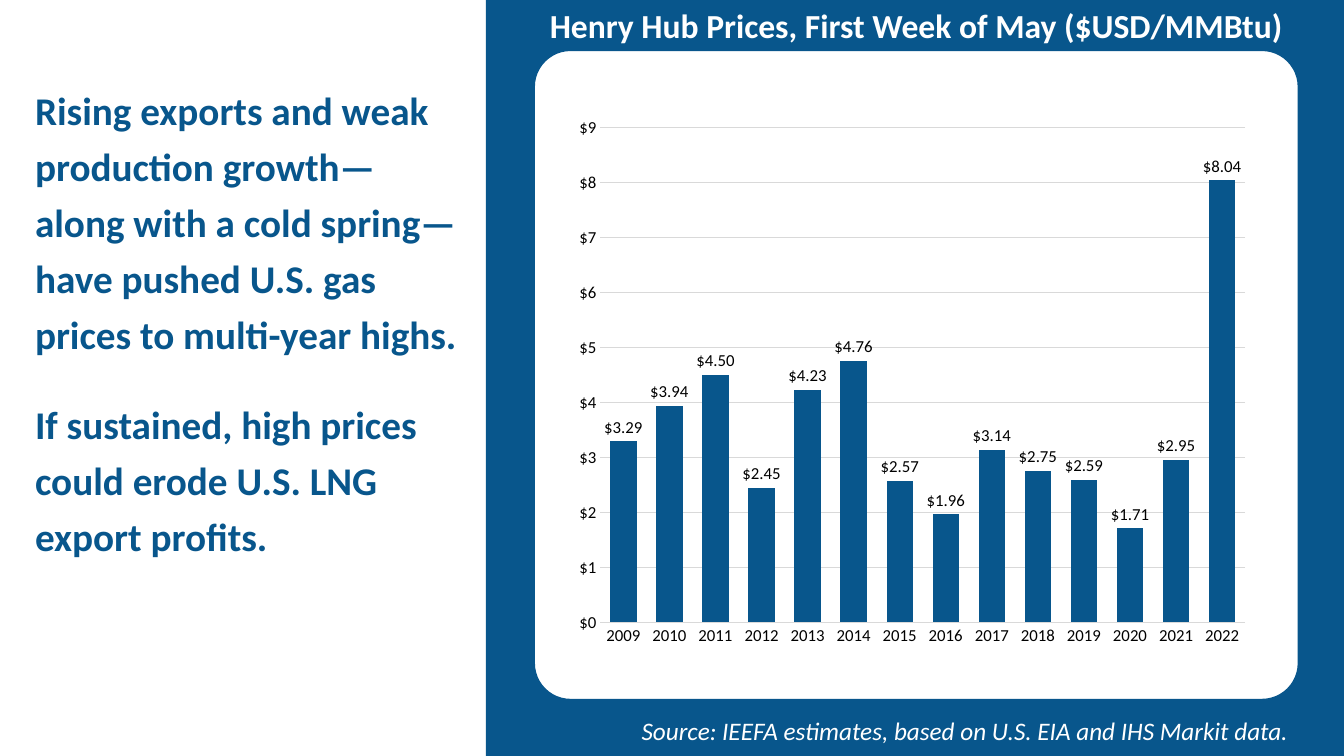
"""Build the Henry Hub gas price slide."""
from dataclasses import dataclass

from pptx import Presentation
from pptx.chart.data import CategoryChartData
from pptx.dml.color import RGBColor
from pptx.enum import chart as charts, shapes, text
from pptx.util import Pt

BLUE, WHITE, BLACK, GREY = "08568C", "FFFFFF", "000000", "D9D9D9"
FONT = "Calibri"
FIRST_YEAR = 2009
PRICES = (3.29, 3.94, 4.5, 2.45, 4.23, 4.76, 2.57, 1.96, 3.14, 2.75, 2.59, 1.71, 2.95, 8.04)


@dataclass(frozen=True)
class Box:
    left: float
    top: float
    width: float
    height: float

    def lengths(self) -> tuple[int, int, int, int]:
        return Pt(self.left), Pt(self.top), Pt(self.width), Pt(self.height)


@dataclass(frozen=True)
class Panel:
    box: Box
    kind: shapes.MSO_SHAPE
    fill: str
    line: str | None = None
    corner: float | None = None


PANELS = (
    Panel(Box(347, 0, 613, 540), shapes.MSO_SHAPE.RECTANGLE, BLUE),
    Panel(Box(381.6, 36, 545.8, 463.7), shapes.MSO_SHAPE.ROUNDED_RECTANGLE, WHITE, BLUE, 0.056),
)


def color(value: str) -> RGBColor:
    return RGBColor.from_string(value)


def style_font(font, size: float, shade: str, bold: bool = False, italic: bool = False) -> None:
    font.name, font.size, font.bold, font.italic = FONT, Pt(size), bold, italic
    font.color.rgb = color(shade)


def add_panel(slide, panel: Panel) -> None:
    shape = slide.shapes.add_shape(panel.kind, *panel.box.lengths())
    shape.shadow.inherit = False
    shape.fill.solid()
    shape.fill.fore_color.rgb = color(panel.fill)
    if panel.line:
        shape.line.color.rgb = color(panel.line)
        shape.line.width = Pt(1)
    else:
        shape.line.fill.background()
    if panel.corner is not None:
        shape.adjustments[0] = panel.corner


def add_text(slide, box: Box, *paragraphs: str, size: float, shade: str,
             bold: bool = False, italic: bool = False,
             align: text.PP_ALIGN = text.PP_ALIGN.LEFT,
             anchor: text.MSO_ANCHOR = text.MSO_ANCHOR.TOP,
             line_spacing: float | None = None, space_after: float = 0,
             margin_bottom: float = 3.6) -> None:
    frame = slide.shapes.add_textbox(*box.lengths()).text_frame
    frame.word_wrap = True
    frame.vertical_anchor = anchor
    frame.margin_bottom = Pt(margin_bottom)
    for index, words in enumerate(paragraphs):
        paragraph = frame.add_paragraph() if index else frame.paragraphs[0]
        paragraph.alignment = align
        paragraph.space_after = Pt(space_after)
        if line_spacing:
            paragraph.line_spacing = Pt(line_spacing)
        run = paragraph.add_run()
        run.text = words
        style_font(run.font, size, shade, bold, italic)


def add_price_chart(slide, box: Box) -> None:
    data = CategoryChartData()
    data.categories = [str(FIRST_YEAR + index) for index in range(len(PRICES))]
    data.add_series("Series 1", PRICES)
    chart = slide.shapes.add_chart(
        charts.XL_CHART_TYPE.COLUMN_CLUSTERED, *box.lengths(), data).chart
    chart.has_title = chart.has_legend = False
    style_font(chart.font, 12, BLACK)

    for axis in (chart.category_axis, chart.value_axis):
        axis.major_tick_mark = axis.minor_tick_mark = charts.XL_TICK_MARK.NONE
        style_font(axis.tick_labels.font, 12, BLACK)
    values = chart.value_axis
    values.minimum_scale, values.maximum_scale, values.major_unit = 0, 9, 1
    values.tick_labels.number_format = '"$"#,##0'
    values.tick_labels.number_format_is_linked = False
    values.format.line.fill.background()
    for line in (chart.category_axis.format.line, values.major_gridlines.format.line):
        line.color.rgb = color(GREY)
        line.width = Pt(0.75)

    plot = chart.plots[0]
    plot.gap_width = 75
    plot.vary_by_categories = False
    series = plot.series[0]
    series.format.fill.solid()
    series.format.fill.fore_color.rgb = color(BLUE)
    labels = series.data_labels
    labels.show_value = True
    labels.number_format = '"$"#,##0.00'
    labels.number_format_is_linked = False
    labels.position = charts.XL_LABEL_POSITION.OUTSIDE_END
    style_font(labels.font, 12, BLACK)


def main() -> None:
    presentation = Presentation()
    presentation.slide_width, presentation.slide_height = Pt(960), Pt(540)
    slide = presentation.slides.add_slide(presentation.slide_layouts[6])
    for panel in PANELS:
        add_panel(slide, panel)
    add_text(slide, Box(18, 20.2, 316, 478.8),
             "Rising exports and weak production growth—along with a cold spring—"
             "have pushed U.S. gas prices to multi-year highs.",
             "If sustained, high prices could erode U.S. LNG export profits.",
             size=28, shade=BLUE, bold=True, anchor=text.MSO_ANCHOR.MIDDLE,
             line_spacing=40, space_after=24, margin_bottom=67.6)
    add_text(slide, Box(403.9, 507.6, 523.4, 28.8),
             "Source: IEEFA estimates, based on U.S. EIA and IHS Markit data.",
             size=18, shade=WHITE, italic=True, align=text.PP_ALIGN.RIGHT)
    add_text(slide, Box(381.6, 0, 545.8, 36),
             "Henry Hub Prices, First Week of May ($USD/MMBtu)",
             size=24, shade=WHITE, bold=True, align=text.PP_ALIGN.CENTER)
    add_price_chart(slide, Box(403.9, 76.3, 495.4, 393.1))
    presentation.save("out.pptx")


if __name__ == "__main__":
    main()
